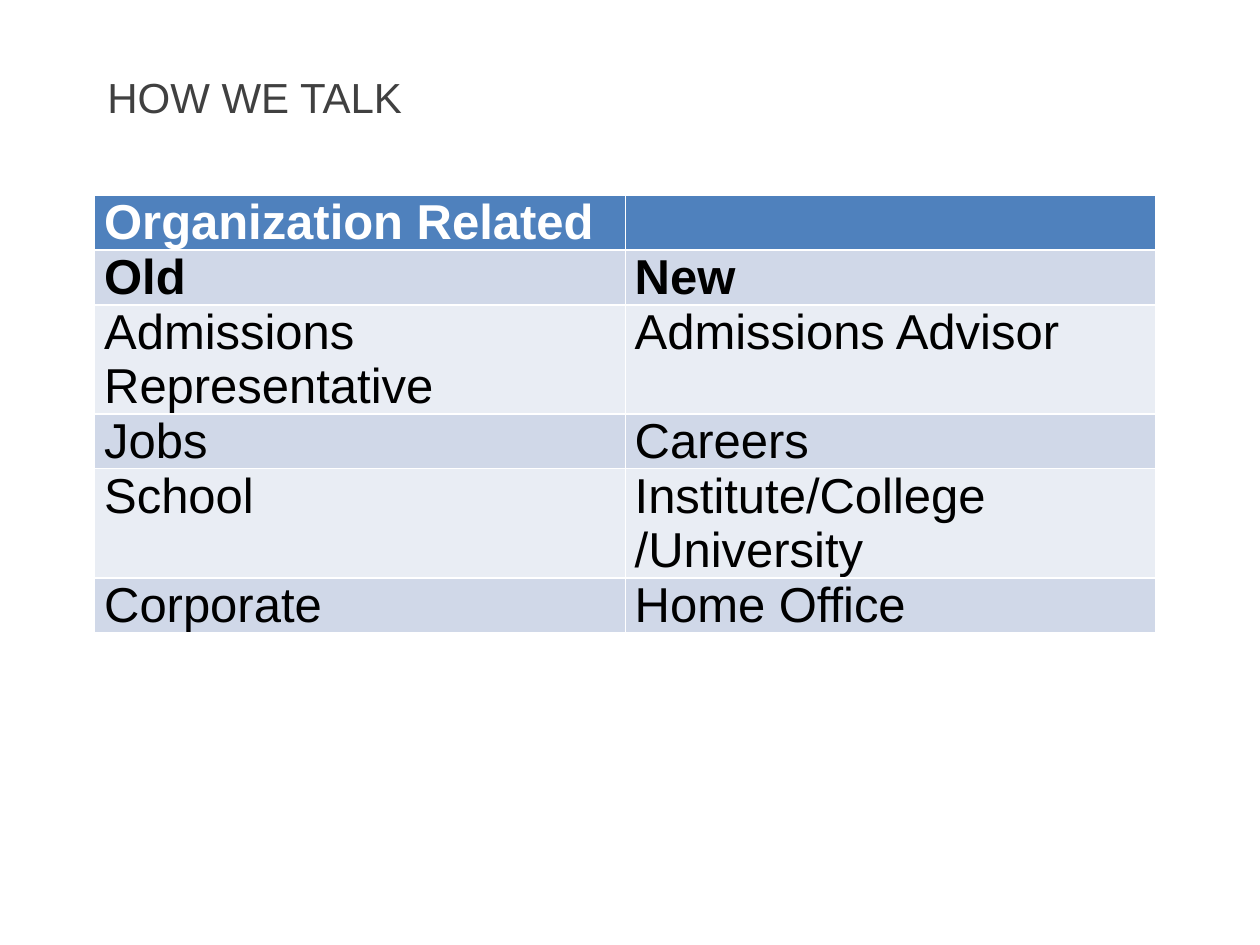
from dataclasses import dataclass

from pptx import Presentation
from pptx.dml.color import RGBColor as RGB
from pptx.enum.text import MSO_ANCHOR as ANCHOR, PP_ALIGN as ALIGN
from pptx.util import Cm, Pt


@dataclass(frozen=True)
class Theme:
    font: str = "Arial"
    title_size: Pt = Pt(24)
    table_size: Pt = Pt(28)
    title: RGB = RGB(0x40, 0x40, 0x40)
    header_text: RGB = RGB(0xFF, 0xFF, 0xFF)
    body_text: RGB = RGB(0, 0, 0)
    header_fill: RGB = RGB(0x4F, 0x81, 0xBD)
    bands: tuple = (RGB(0xE9, 0xED, 0xF4), RGB(0xD0, 0xD8, 0xE8))


THEME = Theme()
TERMS = [
    ("Organization Related", ""),
    ("Old", "New"),
    ("Admissions Representative", "Admissions Advisor"),
    ("Jobs", "Careers"),
    ("School", "Institute/College\n/University"),
    ("Corporate", "Home Office"),
]
BOLD_ROWS = 2


def style_text(tf, size, color, bold=False):
    for p in tf.paragraphs:
        p.alignment = ALIGN.LEFT
        for r in p.runs:
            font = r.font
            font.name, font.size, font.bold = THEME.font, size, bold
            font.color.rgb = color


def place_title(slide, text, left, top, width, height):
    sp = slide.shapes.title
    sp.left, sp.top, sp.width, sp.height = left, top, width, height
    tf = sp.text_frame
    tf.text = text
    tf.vertical_anchor = ANCHOR.MIDDLE
    style_text(tf, THEME.title_size, THEME.title)


def add_terms_table(slide, rows, left, top, width, height):
    shape = slide.shapes.add_table(len(rows), len(rows[0]), left, top, width, height)
    for i, row in enumerate(rows):
        header = i == 0
        for j, text in enumerate(row):
            cell = shape.table.cell(i, j)
            cell.margin_left = cell.margin_right = Cm(0.19)
            cell.margin_top = cell.margin_bottom = 0
            cell.fill.solid()
            cell.fill.fore_color.rgb = THEME.header_fill if header else THEME.bands[i % 2]
            cell.text_frame.text = text
            color = THEME.header_text if header else THEME.body_text
            style_text(cell.text_frame, THEME.table_size, color, i < BOLD_ROWS)


def main():
    prs = Presentation()
    prs.slide_width, prs.slide_height = Cm(25.4), Cm(19.05)
    slide = prs.slides.add_slide(prs.slide_layouts[5])
    left = Cm(1.91)
    place_title(slide, "HOW WE TALK", left, Cm(0.84), Cm(18.21), Cm(2.21))
    add_terms_table(slide, TERMS, left, Cm(3.94), Cm(21.39), Cm(6.24))
    prs.save("out.pptx")


if __name__ == "__main__":
    main()
